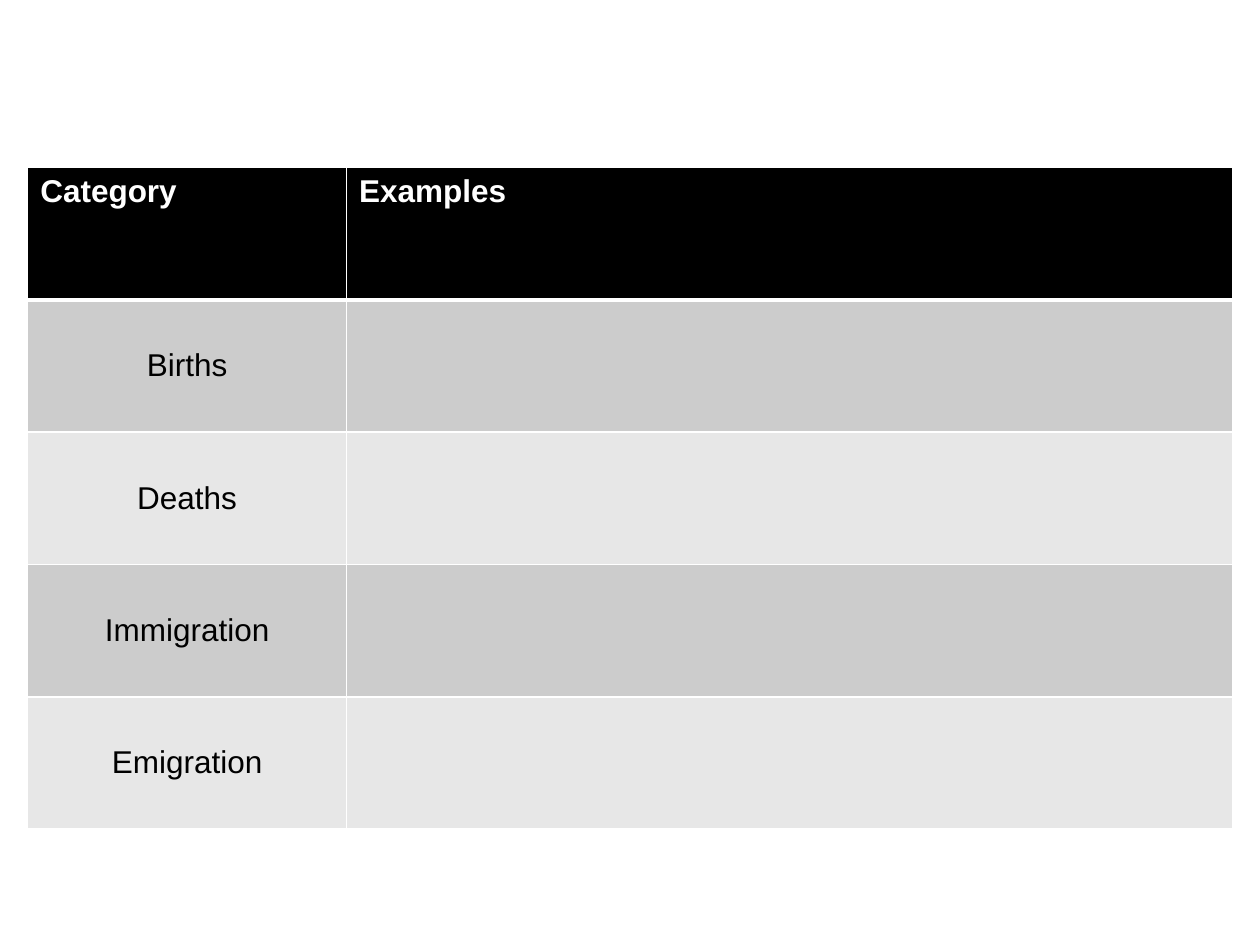
from dataclasses import dataclass

from lxml import etree
from pptx import Presentation
from pptx.dml.color import RGBColor
from pptx.enum import text
from pptx.oxml import ns
from pptx.util import Inches, Pt


@dataclass(frozen=True)
class Theme:
    """Colours, font and line widths of the slide."""
    font: str = "Arial"
    size: int = 18
    head_fill: str = "000000"
    head_text: str = "FFFFFF"
    body_text: str = "000000"
    bands: tuple = ("CCCCCC", "E7E7E7")
    border: str = "FFFFFF"
    thin: int = 1
    thick: int = 3


THEME = Theme()
HEADERS = ("Category", "Examples")
CATEGORIES = ("Births", "Deaths", "Immigration", "Emigration")


def set_borders(cell, widths):
    """Draw the cell's borders with widths in points, keyed by side."""
    tcPr = cell._tc.get_or_add_tcPr()
    for side, width in widths.items():
        ln = etree.SubElement(tcPr, ns.qn(f"a:ln{side}"), w=str(Pt(width)))
        fill = etree.SubElement(ln, ns.qn("a:solidFill"))
        etree.SubElement(fill, ns.qn("a:srgbClr"), val=THEME.border)


def style_cell(cell, row):
    """Give a cell the borders and fill of its row."""
    set_borders(cell, {
        "L": THEME.thin,
        "R": THEME.thin,
        "T": THEME.thick if row == 1 else THEME.thin,
        "B": THEME.thick if row == 0 else THEME.thin,
    })
    color = THEME.bands[(row - 1) % 2] if row else THEME.head_fill
    cell.fill.solid()
    cell.fill.fore_color.rgb = RGBColor.from_string(color)


def write_cell(cell, words, header):
    """Write one run in the header or category style."""
    p = cell.text_frame.paragraphs[0]
    if not header:
        cell.vertical_anchor = text.MSO_ANCHOR.MIDDLE
        p.alignment = text.PP_ALIGN.CENTER
    r = p.add_run()
    r.text = words
    r.font.name = THEME.font
    r.font.size = Pt(THEME.size)
    r.font.bold = header
    color = THEME.head_text if header else THEME.body_text
    r.font.color.rgb = RGBColor.from_string(color)


def add_category_table(s, left, top, width, height):
    """Place the table of categories and their examples in a box."""
    rows = [HEADERS] + [(name, "") for name in CATEGORIES]
    table = s.shapes.add_table(len(rows), len(HEADERS), left, top, width, height).table
    table.columns[0].width = Inches(2.53)
    table.columns[1].width = width - Inches(2.53)
    for i, row in enumerate(rows):
        for j, words in enumerate(row):
            cell = table.cell(i, j)
            style_cell(cell, i)
            if words:
                write_cell(cell, words, header=i == 0)


def main():
    """Build the slide and save it."""
    prs = Presentation()
    prs.slide_width, prs.slide_height = Inches(10), Inches(7.5)
    s = prs.slides.add_slide(prs.slide_layouts[6])
    add_category_table(s, Inches(0.22), Inches(1.33), Inches(9.56), Inches(5.25))
    prs.save("out.pptx")


if __name__ == "__main__":
    main()
